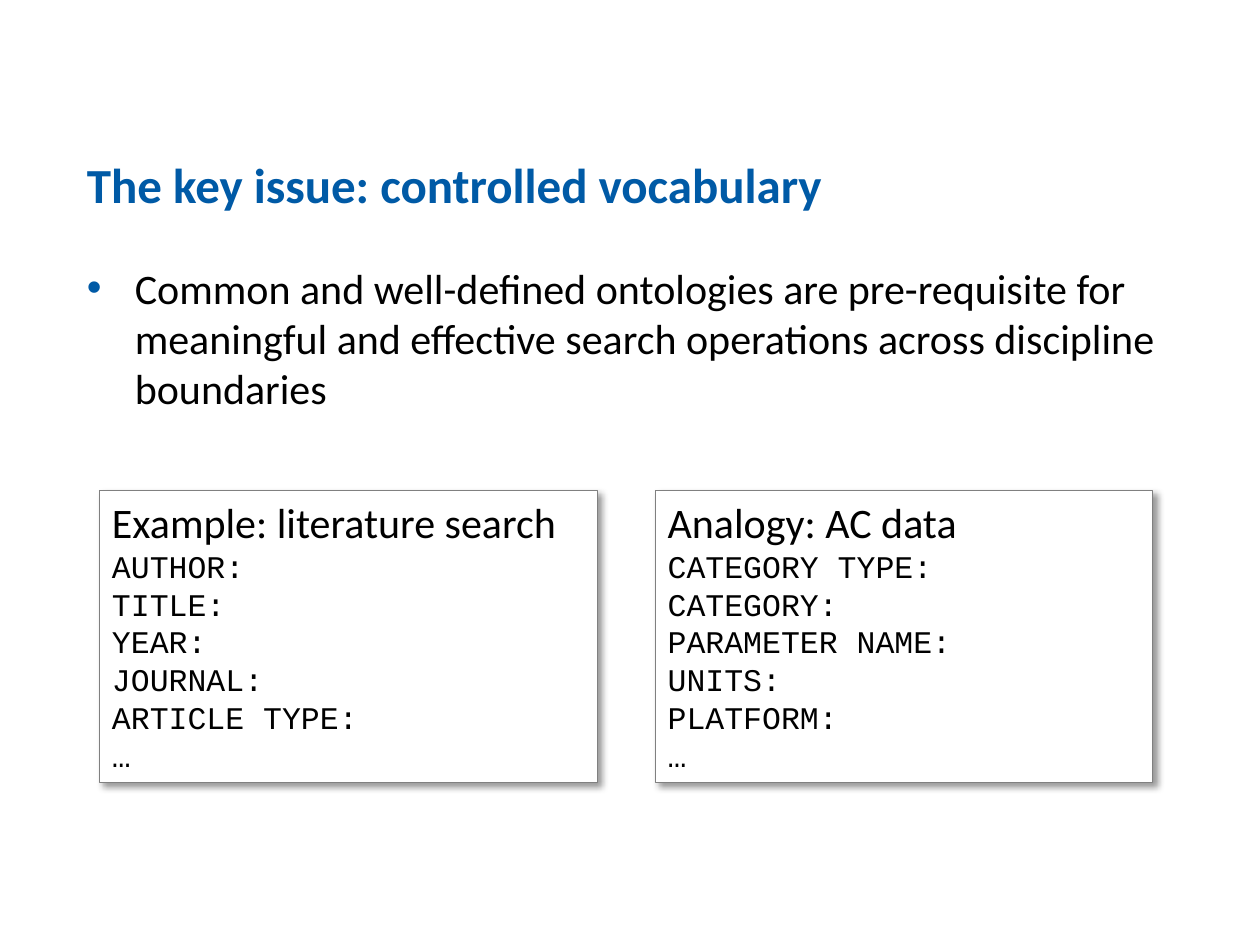
from dataclasses import dataclass

import pptx
import pptx.dml.color
import pptx.enum.shapes
import pptx.enum.text
import pptx.oxml
import pptx.oxml.ns
import pptx.util
from pptx.dml.color import RGBColor
from pptx.util import Inches, Pt

BLUE = RGBColor(0x00, 0x5A, 0xA6)
BLACK = RGBColor(0x00, 0x00, 0x00)
WHITE = RGBColor(0xFF, 0xFF, 0xFF)
GRAY = RGBColor(0x80, 0x80, 0x80)

SANS = "Calibri"
MONO = "Courier New"


@dataclass
class SearchForm:
    left: float
    heading: str
    fields: list[str]


FORMS = [
    SearchForm(0.79, "Example: literature search",
               ["AUTHOR:", "TITLE:", "YEAR:", "JOURNAL:", "ARTICLE TYPE:", "…"]),
    SearchForm(5.2, "Analogy: AC data",
               ["CATEGORY TYPE:", "CATEGORY:", "PARAMETER NAME:", "UNITS:", "PLATFORM:", "…"]),
]


def style_paragraph(paragraph, name: str, size: int, color: RGBColor, bold: bool = False) -> None:
    paragraph.alignment = pptx.enum.text.PP_ALIGN.LEFT
    paragraph.space_before = Pt(0)
    paragraph.font.name = name
    paragraph.font.size = Pt(size)
    paragraph.font.color.rgb = color
    paragraph.font.bold = bold


def place(shape, left: float, top: float, width: float, height: float) -> None:
    shape.left, shape.top = Inches(left), Inches(top)
    shape.width, shape.height = Inches(width), Inches(height)


def add_bullet(paragraph, indent: float, color: RGBColor) -> None:
    properties = paragraph._p.get_or_add_pPr()
    properties.set("marL", str(Inches(indent)))
    properties.set("indent", str(-Inches(indent)))
    namespace = pptx.oxml.ns.nsdecls("a")
    for xml in (
        f'<a:buClr {namespace}><a:srgbClr val="{color}"/></a:buClr>',
        f'<a:buFont {namespace} typeface="Arial"/>',
        f'<a:buChar {namespace} char="•"/>',
    ):
        properties.append(pptx.oxml.parse_xml(xml))


def add_drop_shadow(shape) -> None:
    shape.shadow.inherit = False
    effects = shape._element.spPr.find(pptx.oxml.ns.qn("a:effectLst"))
    effects.append(pptx.oxml.parse_xml(
        f'<a:outerShdw {pptx.oxml.ns.nsdecls("a")} blurRad="{Pt(4)}" dist="{Pt(3)}" '
        f'dir="{45 * 60000}" algn="tl" rotWithShape="0">'
        f'<a:srgbClr val="{BLACK}"><a:alpha val="40000"/></a:srgbClr></a:outerShdw>'))


def add_form(page, form: SearchForm) -> None:
    box = page.shapes.add_shape(
        pptx.enum.shapes.MSO_SHAPE.RECTANGLE,
        Inches(form.left), Inches(3.89), Inches(3.95), Inches(2.32))
    box.fill.solid()
    box.fill.fore_color.rgb = WHITE
    box.line.color.rgb = GRAY
    box.line.width = Pt(0.75)
    add_drop_shadow(box)

    frame = box.text_frame
    frame.word_wrap = True
    frame.auto_size = pptx.enum.text.MSO_AUTO_SIZE.SHAPE_TO_FIT_TEXT
    frame.vertical_anchor = pptx.enum.text.MSO_ANCHOR.TOP
    frame.text = "\n".join([form.heading, *form.fields])
    heading, *fields = frame.paragraphs
    style_paragraph(heading, SANS, 24, BLACK)
    for field in fields:
        style_paragraph(field, MONO, 18, BLACK)


def main() -> None:
    deck = pptx.Presentation()
    deck.slide_width, deck.slide_height = Inches(10), Inches(7.5)
    page = deck.slides.add_slide(deck.slide_layouts[1])

    title = page.shapes.title
    place(title, 0.59, 0.99, 9.13, 0.94)
    title.text_frame.text = "The key issue: controlled vocabulary"
    title.text_frame.vertical_anchor = pptx.enum.text.MSO_ANCHOR.MIDDLE
    style_paragraph(title.text_frame.paragraphs[0], SANS, 28, BLUE, bold=True)

    body = page.placeholders[1]
    place(body, 0.59, 2.03, 9.13, 1.35)
    body.text_frame.text = (
        "Common and well-defined ontologies are pre-requisite for meaningful "
        "and effective search operations across discipline boundaries")
    body.text_frame.auto_size = pptx.enum.text.MSO_AUTO_SIZE.NONE
    statement = body.text_frame.paragraphs[0]
    add_bullet(statement, 0.38, BLUE)
    style_paragraph(statement, SANS, 24, BLACK)

    for form in FORMS:
        add_form(page, form)

    deck.save("out.pptx")


if __name__ == "__main__":
    main()
